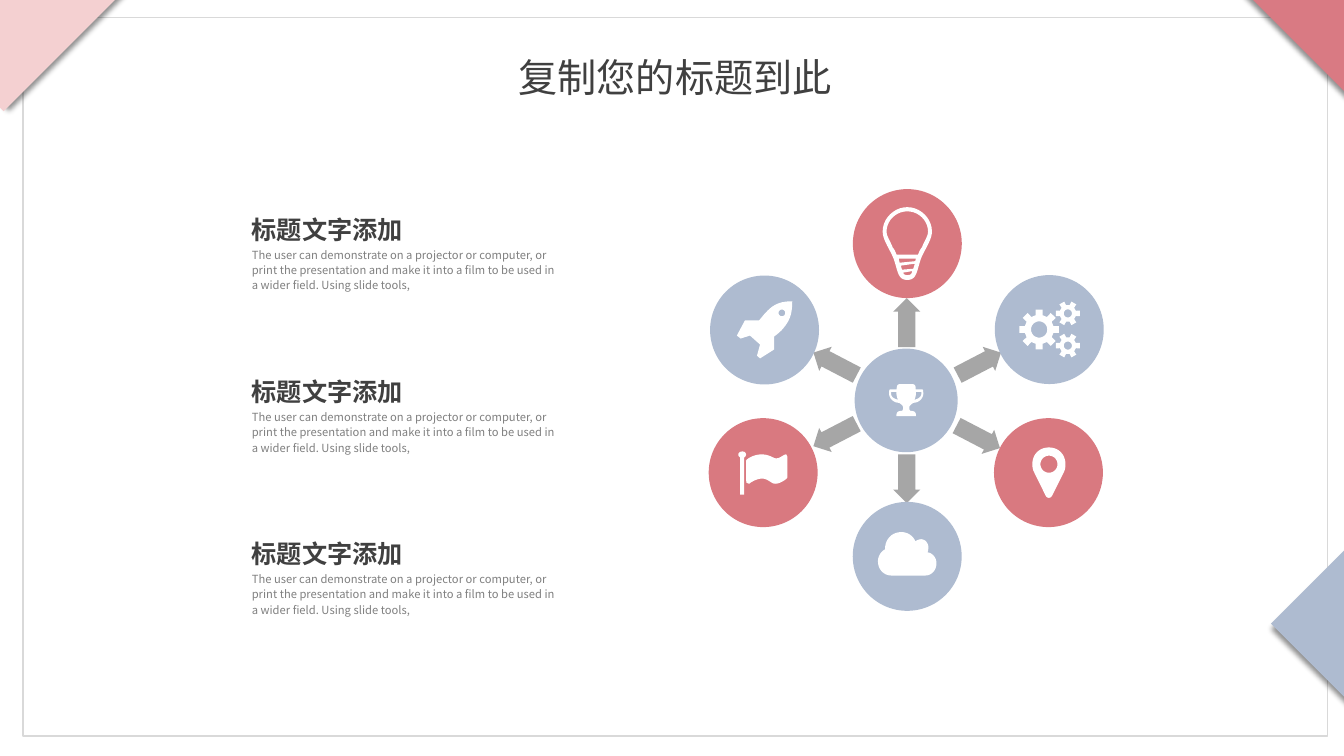
from dataclasses import dataclass
from math import cos, pi, sin

from lxml import etree
from pptx import Presentation
from pptx.dml.color import RGBColor
from pptx.enum.shapes import MSO_SHAPE
from pptx.enum.text import MSO_AUTO_SIZE, PP_ALIGN
from pptx.oxml.ns import qn
from pptx.util import Pt

RECTANGLE, ELLIPSE, ARROW = MSO_SHAPE.RECTANGLE, MSO_SHAPE.OVAL, MSO_SHAPE.DOWN_ARROW
LEFT, CENTER = PP_ALIGN.LEFT, PP_ALIGN.CENTER
GROW = MSO_AUTO_SIZE.SHAPE_TO_FIT_TEXT


@dataclass(frozen=True)
class Theme:
    """Colours, font and type sizes of the deck."""
    white: str = "FFFFFF"
    frame: str = "D9D9D9"
    blush: str = "F4D0D1"
    corner_rose: str = "D97A83"
    rose: str = "D97980"
    blue: str = "AEBBD0"
    arrow: str = "A6A6A6"
    ink: str = "404040"
    muted: str = "808080"
    font: str = "Noto Sans CJK SC"
    title: int = 28
    heading: int = 18
    body: int = 8


THEME = Theme()


def flatten(contour, steps=10):
    """Turn points and six-number cubic curves into plain points."""
    points = []
    for part in contour:
        if len(part) == 2:
            points.append(part)
            continue
        x, y = points[-1]
        ax, ay, bx, by, cx, cy = part
        for step in range(1, steps + 1):
            t = step / steps
            u = 1 - t
            weights = (u ** 3, 3 * u * u * t, 3 * u * t * t, t ** 3)
            points.append((sum(w * v for w, v in zip(weights, (x, ax, bx, cx))),
                           sum(w * v for w, v in zip(weights, (y, ay, by, cy)))))
    return points


def mirrored(contour):
    """Reflect a contour in the vertical axis."""
    return [tuple(-v if i % 2 == 0 else v for i, v in enumerate(part)) for part in contour]


def ring(x, y, radius, sides=36):
    """Return a round contour."""
    turns = [2 * pi * i / sides for i in range(sides)]
    return [(x + radius * cos(a), y + radius * sin(a)) for a in turns]


def gear(x, y, teeth, tip, root, hole):
    """Return the toothed rim and the hole of a gear."""
    pitch = 2 * pi / teeth
    profile = ((-0.3, root), (-0.22, tip), (0.22, tip), (0.3, root))
    rim = [(x + r * cos((i + part) * pitch), y + r * sin((i + part) * pitch))
           for i in range(teeth) for part, r in profile]
    return [rim, ring(x, y, hole)]


HANDLE = [(10.8, -6), (7, -6), (7, -3.2, 6.5, -1.8, 5.8, -0.4), (8.6, -1, 10.8, -2.5, 10.8, -4.7)]
TROPHY = [
    [(12.2, -4.7), (12.2, -1.8, 9.4, 1.8, 5, 1.8), (3.6, 3, 2.2, 3.5, 2.2, 5.4),
     (2.2, 6.5, 2.5, 7.6, 3.6, 7.6), (5.8, 7.6, 7, 8.3, 7, 11.2), (-7, 11.2),
     (-7, 8.3, -5.8, 7.6, -3.6, 7.6), (-2.5, 7.6, -2.2, 6.5, -2.2, 5.4),
     (-2.2, 3.5, -3.6, 3, -5, 1.8), (-9.4, 1.8, -12.2, -1.8, -12.2, -4.7),
     (-12.2, -7.8, -12, -7.8, -10.8, -7.8), (-6.8, -7.8), (-6.8, -10, -6.5, -11.6, -4.3, -11.6),
     (4.3, -11.6), (6.5, -11.6, 6.8, -10, 6.8, -7.8), (10.8, -7.8),
     (12, -7.8, 12.2, -7.8, 12.2, -4.7)],
    HANDLE, mirrored(HANDLE)]
BULB = [
    [(0, -26), (-9.4, -26, -17.6, -18, -17.6, -8.6), (-17.6, -2.2, -11.8, 5, -9.5, 11.5),
     (-6.6, 20.5, -6.6, 26, 0, 26), (6.6, 26, 6.6, 20.5, 9.5, 11.5),
     (11.8, 5, 17.6, -2.2, 17.6, -8.6), (17.6, -18, 9.4, -26, 0, -26)],
    [(7.6, 8), (-7.6, 8), (-8.3, 6.5, -9, 4.3, -10.4, 2.9), (-11.9, -1.4, -14.8, -5, -14.8, -8.6),
     (-14.8, -16.5, -8, -23, 0, -23), (8, -23, 14.8, -16.5, 14.8, -8.6),
     (14.8, -5, 11.9, -1.4, 10.4, 2.9), (9, 4.3, 8.3, 6.5, 7.6, 8)],
    [(-5.5, 13.7), (-6.1, 10.8), (6.1, 10.8), (5.7, 12.6)],
    [(4.3, 18), (-3.8, 18.7), (-4.6, 15.8), (5.4, 14.4)],
    [(0, 22.5), (-1.4, 22.5, -2.4, 22.3, -3, 20.8), (3.6, 19.7), (2.9, 22.3, 2, 22.5, 0, 22.5)]]
PIN = [
    [(11.6, -1.5), (2.9, 16), (2.2, 17.4, 1.4, 18, 0.4, 18), (-0.7, 18, -1.6, 17.4, -2.2, 16),
     (-10.8, -1.5), (-11.2, -3, -11.5, -4.5, -11.5, -6), (-11.5, -13, -6.5, -18, 0.4, -18),
     (7.2, -18, 12.2, -13, 12.2, -6), (12.2, -4.5, 12, -3, 11.6, -1.5)],
    ring(0.4, -6, 6.1)]
ROCKET = [
    [(12, 0.4), (10.4, 1.8, 9, 3.2, 6.8, 4.7), (6.8, 14), (-3.2, 20.3), (-5.4, 18.4),
     (-3.2, 10.4), (-10.4, 4), (-17, 6.1), (-19.8, 4), (-14, -6.8), (-4, -6.8),
     (-2.5, -8.3, -1.1, -10.4, 0.4, -11.9), (6.1, -18.4, 11.2, -20.5, 19.8, -20.5),
     (19.8, -11.2, 18, -6.1, 12, 0.4)],
    ring(12.4, -12.2, 2.4)]
CLOUD = [
    [(13, 13.7), (-11.5, 13.7), (-16.6, 13.7, -20.9, 9.4, -20.9, 3.6),
     (-20.9, 0, -18.7, -3.6, -15.8, -5), (-16, -12, -11, -17.3, -4.3, -17.3),
     (0.7, -17.3, 4.3, -14.4, 5.8, -10.8), (7.2, -11.6, 8.6, -12.2, 10, -12.2),
     (13, -12.2, 15.1, -9.4, 15.1, -6.5), (15.1, -5, 15, -3.6, 14.4, -2.9),
     (18.7, -2.2, 20.9, 1.4, 20.9, 5), (20.9, 10, 17.3, 13.7, 13, 13.7)]]
FLAG = [
    [(-13.5, -10.8), (-13.5, 15.8), (-16.4, 15.8), (-16.4, -10.8),
     (-18.5, -12, -18, -15.1, -14.8, -15.1), (-11.8, -15.1, -11.4, -12, -13.5, -10.8)],
    [(17.3, 3.6), (16.5, 5, 12, 8, 8.6, 8), (5.8, 8, 3.6, 4.3, -0.7, 4.3),
     (-3.6, 4.3, -7.2, 5.8, -10, 8), (-12, 7.2), (-12.2, -8.6), (-10.5, -11, -5, -13, -1.4, -13),
     (2.2, -13, 4.3, -12.2, 7.2, -10.8), (11, -8.5, 14, -13, 16.5, -13), (17.3, -11.5)]]
GEARS = (gear(-7.2, 0, 8, 14.4, 10.5, 5.8)
         + gear(13.3, -11.5, 6, 8.8, 6, 2.9) + gear(13.3, 11.5, 6, 8.8, 6, 2.9))

CORNERS = [
    (-44.6, -34.6, 121, 83.5, THEME.blush, 0),
    (917.3, -66.2, 64.8, 149.8, THEME.corner_rose, 90),
    (931, 393.8, 101.5, 107.3, THEME.blue, 90),
]
HUB = (647.3, 286)
SPOKES = [
    ((648.1, 174), THEME.rose, BULB, (647.7, 230.4), 180),
    ((749.5, 235.4), THEME.blue, GEARS, (699.5, 259.9), 242.5),
    ((748.9, 337.6), THEME.rose, PIN, (698.8, 312), 297.5),
    ((648, 397.4), THEME.blue, CLOUD, (647.7, 342), 0),
    ((545.1, 337.6), THEME.rose, FLAG, (596.5, 310.7), 62.5),
    ((546.1, 235.7), THEME.blue, ROCKET, (596.5, 259.9), 117.5),
]
BODY = ("The user can demonstrate on a projector or computer, or print the presentation "
        "and make it into a film to be used in a wider field. Using slide tools,")


class Page:
    """Draw styled elements on one slide, in points."""

    def __init__(self, deck, theme):
        self.theme = theme
        self.shapes = deck.slides.add_slide(deck.slide_layouts[6]).shapes

    def paint(self, shape, fill, line=None):
        shape.shadow.inherit = False
        shape.fill.solid()
        shape.fill.fore_color.rgb = RGBColor.from_string(fill)
        if line:
            shape.line.color.rgb = RGBColor.from_string(line)
            shape.line.width = Pt(1)
        else:
            shape.line.fill.background()
        return shape

    def shape(self, kind, left, top, width, height, fill, line=None, rotation=0):
        shape = self.shapes.add_shape(kind, Pt(left), Pt(top), Pt(width), Pt(height))
        shape.rotation = rotation
        return self.paint(shape, fill, line)

    def centred(self, kind, center, width, height, fill, rotation=0):
        x, y = center
        return self.shape(kind, x - width / 2, y - height / 2, width, height, fill, rotation=rotation)

    def corner(self, left, top, width, height, fill, direction):
        shape = self.shape(RECTANGLE, left, top, width, height, fill, rotation=315)
        effects = shape._element.spPr.find(qn("a:effectLst"))
        shadow = etree.SubElement(effects, qn("a:outerShdw"), blurRad=str(Pt(4)), dist=str(Pt(4)),
                                  dir=str(direction * 60000), algn="ctr", rotWithShape="0")
        color = etree.SubElement(shadow, qn("a:srgbClr"), val="000000")
        etree.SubElement(color, qn("a:alpha"), val="44000")

    def arrow(self, center, rotation):
        shape = self.centred(ARROW, center, 19.4, 34.9, self.theme.arrow, rotation)
        shape.adjustments[0], shape.adjustments[1] = 0.635, 0.5

    def icon(self, center, contours):
        x, y = center
        outlines = [[(Pt(x + dx), Pt(y + dy)) for dx, dy in flatten(part)] for part in contours]
        builder = self.shapes.build_freeform(*outlines[0][0])
        for index, outline in enumerate(outlines):
            if index:
                builder.move_to(*outline[0])
            builder.add_line_segments(outline[1:], close=True)
        self.paint(builder.convert_to_shape(), self.theme.white)

    def text(self, left, top, width, height, words, size, color,
             bold=False, align=LEFT, spacing=1.0, wrap=True):
        box = self.shapes.add_textbox(Pt(left), Pt(top), Pt(width), Pt(height))
        frame = box.text_frame
        frame.word_wrap, frame.auto_size = wrap, GROW
        para = frame.paragraphs[0]
        para.alignment, para.line_spacing = align, spacing
        span = para.add_run()
        span.text = words
        for name, value in {"name": self.theme.font, "size": Pt(size), "bold": bold}.items():
            setattr(span.font, name, value)
        span.font.color.rgb = RGBColor.from_string(color)
        etree.SubElement(span._r.get_or_add_rPr(), qn("a:ea"), typeface=self.theme.font)


def main():
    """Build the slide and save it."""
    deck = Presentation()
    deck.slide_width, deck.slide_height = Pt(960), Pt(540)
    page = Page(deck, THEME)
    page.shape(RECTANGLE, 16.4, 12.4, 931.7, 513.4, THEME.white, THEME.frame)
    for corner in CORNERS:
        page.corner(*corner)
    page.text(362, 34.6, 240.5, 41, "复制您的标题到此", THEME.title, THEME.ink, align=CENTER, wrap=False)
    for row in range(3):
        top = 145 + row * 115.8
        page.text(172.8, top, 197.3, 31.7, "标题文字添加", THEME.heading, THEME.ink, bold=True, spacing=1.2)
        page.text(172.8, top + 27.4, 233.3, 40.3, BODY, THEME.body, THEME.muted, spacing=1.14)
    page.centred(ELLIPSE, HUB, 73.6, 74, THEME.blue)
    page.icon(HUB, TROPHY)
    for center, fill, icon, arrow_center, rotation in SPOKES:
        page.arrow(arrow_center, rotation)
        page.centred(ELLIPSE, center, 77.8, 77.8, fill)
        page.icon(center, icon)
    deck.save("out.pptx")


if __name__ == "__main__":
    main()
